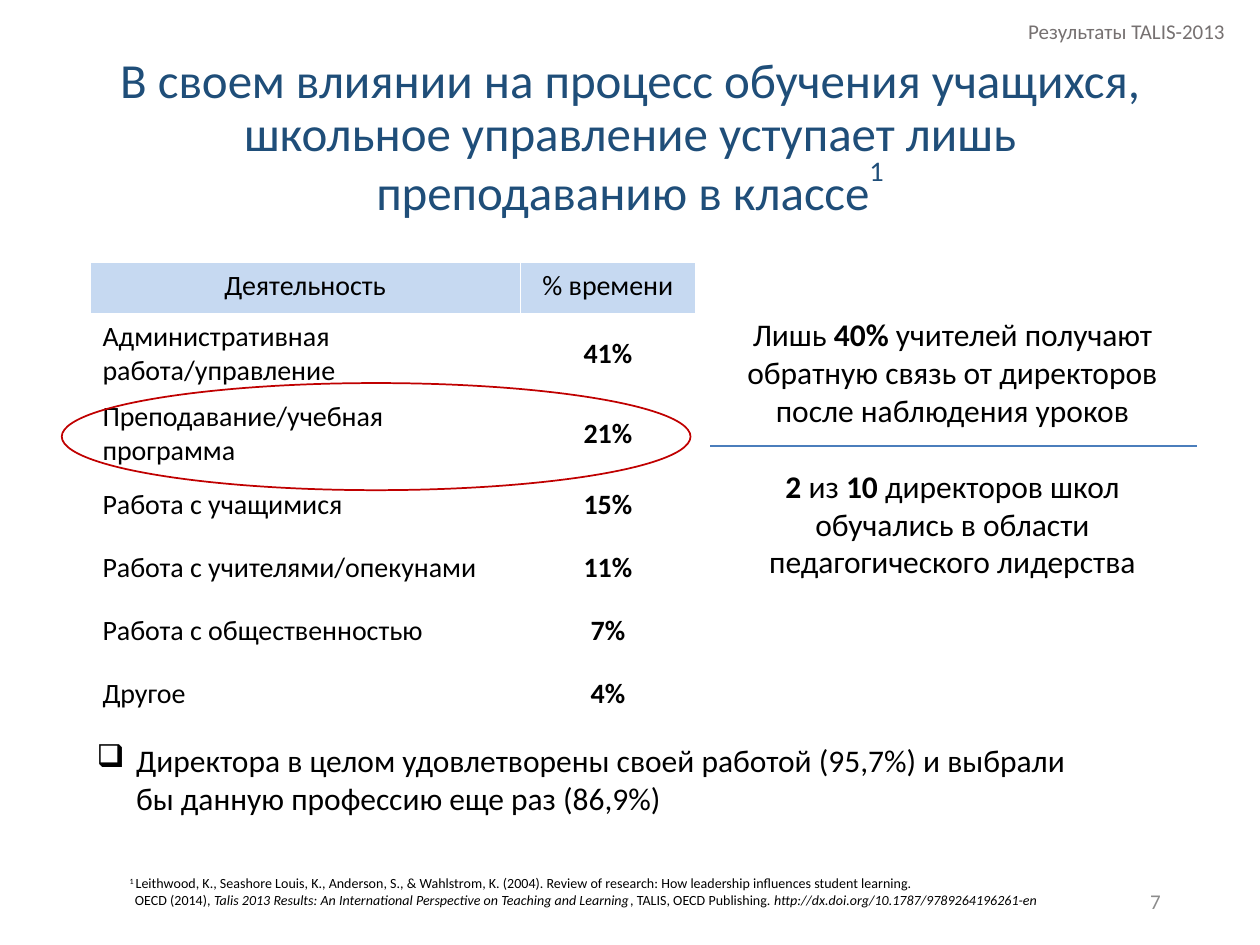
from lxml.etree import SubElement
from pptx import Presentation
from pptx.dml.color import RGBColor
from pptx.enum.shapes import MSO_CONNECTOR, MSO_SHAPE
from pptx.enum.text import MSO_ANCHOR as Anchor, PP_ALIGN as Align
from pptx.oxml.ns import qn
from pptx.util import Pt

# Content: a paragraph is a list of (text, style) spans; b bold, i italic, s superscript
TITLE = [[("В своем влиянии на процесс обучения учащихся, школьное управление "
           "уступает лишь преподаванию в классе", ""), ("1", "s")]]
HEADER = [[("Результаты TALIS-2013", "")]]
FACTS = [
    [("Лишь ", ""), ("40%", "b"),
     (" учителей получают обратную связь от директоров после наблюдения уроков", "")],
    [("2", "b"), (" из ", ""), ("10", "b"),
     (" директоров школ обучались в области педагогического лидерства", "")],
]
ACTIVITIES = [
    ("Деятельность", "% времени"),
    ("Административная работа/управление", "41%"),
    ("Преподавание/учебная программа", "21%"),
    ("Работа с учащимися", "15%"),
    ("Работа с учителями/опекунами", "11%"),
    ("Работа с общественностью", "7%"),
    ("Другое", "4%"),
]
CONCLUSION = [[("Директора в целом удовлетворены своей работой (95,7%) и выбрали "
                "бы данную профессию еще раз (86,9%)", "")]]
SOURCES = [
    [("1 ", "s"), ("Leithwood, K., Seashore Louis, K., Anderson, S., & Wahlstrom, K. (2004). "
                   "Review of research: How leadership influences student learning.", "")],
    [("OECD (2014), ", ""),
     ("Talis 2013 Results: An International Perspective on Teaching and Learning", "i"),
     (", TALIS, OECD Publishing. ", ""),
     ("http://dx.doi.org/10.1787/9789264196261-en", "i")],
]
PAGE_NUMBER = [[("7", "")]]

THEME = {
    "font": "Calibri",
    "title": 28, "body": 18, "table": 16, "small": 12, "source": 8,
    "ink": "000000", "navy": "1F4E79", "grey": "767171", "pale": "8C8C8C",
    "head": "C6D9F1", "rule": "4B7EBC", "accent": "C00000",
}


def color(name):
    return RGBColor.from_string(THEME[name])


def write(frame, paragraphs, size, ink="ink", align=Align.LEFT, raised=30):
    """Fill a text frame with styled paragraphs; raised is the superscript shift in percent."""
    for index, spans in enumerate(paragraphs):
        para = frame.add_paragraph() if index else frame.paragraphs[0]
        para.alignment = align
        for text, style in spans:
            span = para.add_run()
            span.text = text
            font = span.font
            font.name, font.size = THEME["font"], Pt(THEME[size])
            font.bold, font.italic = "b" in style, "i" in style
            font.color.rgb = color(ink)
            if "s" in style:
                span._r.get_or_add_rPr().set("baseline", str(raised * 1000))


def add_text(page, place, paragraphs, size, anchor=Anchor.TOP, wrap=True, **style):
    frame = page.shapes.add_textbox(*map(Pt, place)).text_frame
    frame.word_wrap, frame.vertical_anchor = wrap, anchor
    write(frame, paragraphs, size, **style)
    return frame.paragraphs


def indent(para, left, first=0):
    properties = para._p.get_or_add_pPr()
    properties.set("marL", str(Pt(left)))
    properties.set("indent", str(Pt(first)))
    return properties


def add_activities(page):
    widths, heights = (246, 100), [29.5] + [36] * (len(ACTIVITIES) - 1)
    table = page.shapes.add_table(len(ACTIVITIES), len(widths), Pt(51.4), Pt(149.8),
                                  Pt(sum(widths)), Pt(sum(heights))).table
    table.first_row = table.horz_banding = False
    for column, width in zip(table.columns, widths):
        column.width = Pt(width)
    for row, (line, height) in enumerate(zip(ACTIVITIES, heights)):
        table.rows[row].height = Pt(height)
        for col, text in enumerate(line):
            cell = table.cell(row, col)
            if row == 0:
                cell.fill.solid()
                cell.fill.fore_color.rgb = color("head")
            else:
                cell.fill.background()
                cell.vertical_anchor = Anchor.MIDDLE
            centred = row == 0 or col == 1
            write(cell.text_frame, [[(text, "b" if row and col else "")]], "table",
                  align=Align.CENTER if centred else Align.LEFT)


def main():
    deck = Presentation()
    deck.slide_width, deck.slide_height = Pt(720), Pt(540)
    page = deck.slides.add_slide(deck.slide_layouts[6])

    # Title
    title = add_text(page, (49.7, 27.4, 620.6, 104.4), TITLE, "title", Anchor.MIDDLE,
                     ink="navy", align=Align.CENTER, raised=60)
    title[0].line_spacing = 0.9

    # Facts on the right, divided by a rule
    facts = add_text(page, (400.3, 176.4, 288, 159.8), FACTS, "body", align=Align.CENTER)
    facts[1].space_before = Pt(22)
    add_activities(page)
    rule = page.shapes.add_connector(MSO_CONNECTOR.STRAIGHT, Pt(406), Pt(254.9),
                                     Pt(684), Pt(254.9))
    rule.line.color.rgb, rule.line.width = color("rule"), Pt(0.75)
    SubElement(rule._element.spPr, qn("a:effectLst"))

    # Ring around the teaching row
    ring = page.shapes.add_shape(MSO_SHAPE.OVAL, Pt(35.3), Pt(218.9), Pt(359.3), Pt(61.2))
    ring.shadow.inherit = False
    ring.fill.background()
    ring.line.color.rgb, ring.line.width = color("accent"), Pt(1)

    # Sources, with the second line set under the first name
    sources = add_text(page, (67, 496.1, 609.1, 36.7), SOURCES, "source")
    indent(sources[1], 3)

    # Conclusion with a box bullet
    conclusion = add_text(page, (48.2, 419.8, 592.6, 51.1), CONCLUSION, "body")
    SubElement(indent(conclusion[0], 22.5, -22.5), qn("a:buChar")).set("char", "❑")

    # Header and page number
    header = add_text(page, (579.6, 8.6, 128.2, 20.2), HEADER, "small", wrap=False,
                      ink="grey", align=Align.CENTER)
    header[0].line_spacing, header[0].space_before = 0.9, Pt(10)
    add_text(page, (508.3, 500.4, 162, 28.8), PAGE_NUMBER, "small", Anchor.MIDDLE,
             ink="pale", align=Align.RIGHT)

    deck.save("out.pptx")


if __name__ == "__main__":
    main()
